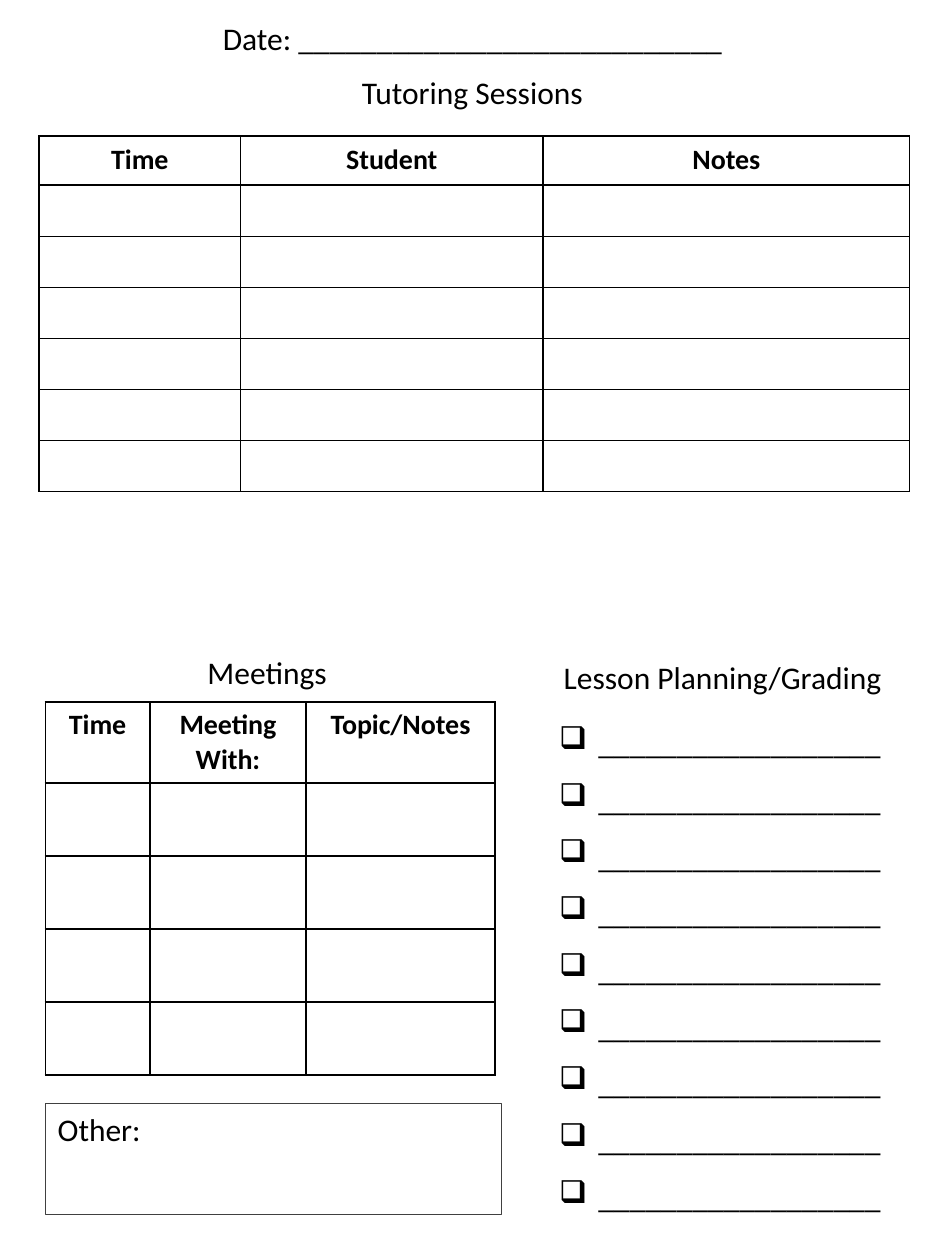
from lxml.etree import SubElement
from pptx import Presentation
from pptx.dml.color import RGBColor
from pptx.enum.shapes import MSO_SHAPE
from pptx.enum.text import MSO_ANCHOR, MSO_AUTO_SIZE, PP_ALIGN
from pptx.oxml.ns import qn
from pptx.util import Inches, Pt

BLACK = "000000"
BODY = {"name": "Calibri", "size": Pt(18), "bold": False}
HEADER = {"name": "Calibri", "size": Pt(16), "bold": True}


def rgb(value):
    """Return the colour for a hex string."""
    return RGBColor.from_string(value)


def write(p, text, fmt, align=PP_ALIGN.LEFT):
    """Put one formatted run in a paragraph."""
    p.alignment = align
    r = p.add_run()
    r.text = text
    for name, value in fmt.items():
        setattr(r.font, name, value)
    r.font.color.rgb = rgb(BLACK)


def set_frame(tf):
    """Give a text frame the shared wrapping, anchor and margins."""
    values = {
        "word_wrap": True,
        "auto_size": MSO_AUTO_SIZE.NONE,
        "vertical_anchor": MSO_ANCHOR.TOP,
        "margin_left": Inches(0.1),
        "margin_right": Inches(0.1),
        "margin_top": Inches(0.05),
        "margin_bottom": Inches(0.05),
    }
    for name, value in values.items():
        setattr(tf, name, value)


def add_heading(s, box, text):
    """Add a centred heading in a text box."""
    sp = s.shapes.add_textbox(*map(Inches, box))
    set_frame(sp.text_frame)
    write(sp.text_frame.paragraphs[0], text, BODY, PP_ALIGN.CENTER)


def set_title(s, box, text):
    """Move and format the title placeholder."""
    sp = s.shapes.title
    sp.left, sp.top, sp.width, sp.height = map(Inches, box)
    set_frame(sp.text_frame)
    write(sp.text_frame.paragraphs[0], text, BODY, PP_ALIGN.CENTER)


def set_borders(cell):
    """Draw a thin black line on each side of a cell."""
    tcPr = cell._tc.get_or_add_tcPr()
    for side in ("a:lnL", "a:lnR", "a:lnT", "a:lnB"):
        ln = SubElement(tcPr, qn(side), w=str(Pt(1)))
        fill = SubElement(ln, qn("a:solidFill"))
        SubElement(fill, qn("a:srgbClr"), val=BLACK)


def add_log(s, box, headers, widths, header_height, row_height, blank_rows):
    """Add a table with a header row above blank rows to fill in."""
    rows = blank_rows + 1
    table = s.shapes.add_table(rows, len(headers), *map(Inches, box)).table
    table.horz_banding = False
    for column, width in zip(table.columns, widths):
        column.width = Inches(width)
    for i, row in enumerate(table.rows):
        row.height = Inches(row_height if i else header_height)
        for cell in row.cells:
            set_borders(cell)
            cell.fill.background()
    for cell, text in zip(table.rows[0].cells, headers):
        write(cell.text_frame.paragraphs[0], text, HEADER, PP_ALIGN.CENTER)


def add_checklist(s, box, count):
    """Add blank lines to write on, each with a check box bullet."""
    tf = s.shapes.add_textbox(*map(Inches, box)).text_frame
    set_frame(tf)
    for i in range(count):
        p = tf.add_paragraph() if i else tf.paragraphs[0]
        pPr = p._p.get_or_add_pPr()
        pPr.set("marL", str(Inches(0.31)))
        pPr.set("indent", str(Inches(-0.31)))
        SubElement(pPr, qn("a:buChar"), char="❑")
        p.line_spacing = 1.5
        write(p, "_" * 18, BODY)


def add_other(s, box):
    """Add the outlined box for other notes."""
    sp = s.shapes.add_shape(MSO_SHAPE.RECTANGLE, *map(Inches, box))
    sp.shadow.inherit = False
    sp.fill.background()
    sp.line.color.rgb = rgb("404040")
    sp.line.width = Pt(0.75)
    set_frame(sp.text_frame)
    write(sp.text_frame.paragraphs[0], "Other:", BODY)


def main():
    """Build the daily planner page."""
    prs = Presentation()
    prs.slide_width, prs.slide_height = Inches(7.5), Inches(10)
    s = prs.slides.add_slide(prs.slide_layouts[5])
    set_title(s, (0, 0.53, 7.5, 0.4), "Tutoring Sessions")
    add_log(s, (0.31, 1.08, 6.91, 2.79), ("Time", "Student", "Notes"),
            (1.6, 2.4, 2.91), 0.39, 0.4, 6)
    add_log(s, (0.36, 5.57, 3.57, 2.95), ("Time", "Meeting With:", "Topic/Notes"),
            (0.83, 1.24, 1.5), 0.63, 0.58, 4)
    add_heading(s, (0, 0.1, 7.5, 0.4), "Date: " + "_" * 27)
    add_heading(s, (0.31, 5.13, 3.62, 0.4), "Meetings")
    add_checklist(s, (4.34, 5.54, 2.8, 4.14), 9)
    add_heading(s, (3.99, 5.17, 3.49, 0.4), "Lesson Planning/Grading")
    add_other(s, (0.36, 8.76, 3.62, 0.88))
    prs.save("out.pptx")


if __name__ == "__main__":
    main()
